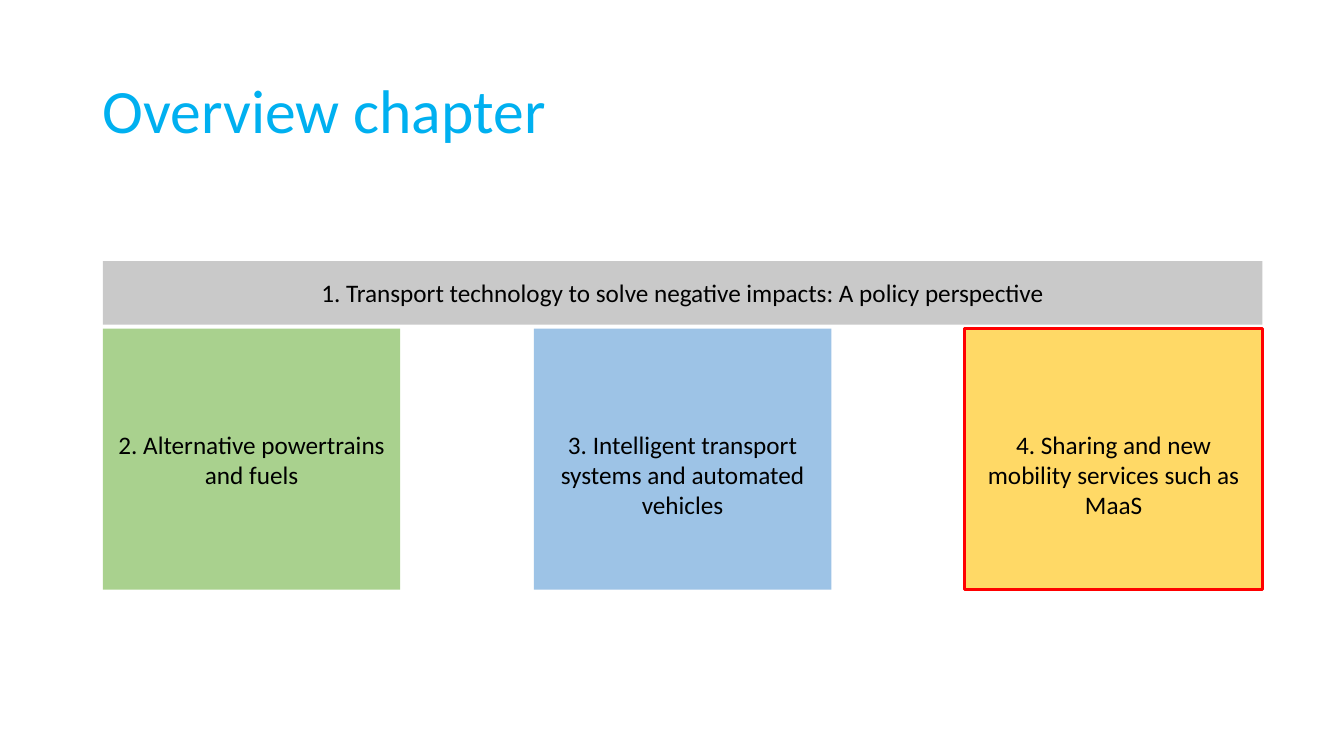
from dataclasses import dataclass

from pptx import Presentation
from pptx.dml.color import RGBColor
from pptx.enum.shapes import MSO_SHAPE
from pptx.enum.text import MSO_ANCHOR, PP_ALIGN
from pptx.util import Inches, Pt

RECTANGLE = MSO_SHAPE.RECTANGLE
MIDDLE = MSO_ANCHOR.MIDDLE
LEFT = PP_ALIGN.LEFT
CENTER = PP_ALIGN.CENTER


@dataclass(frozen=True)
class Theme:
    font: str = "Calibri"
    title_size: float = 44
    body_size: float = 18
    outline_width: float = 2.25
    title: str = "00B0F0"
    text: str = "000000"
    policy: str = "C9C9C9"
    powertrains: str = "A9D18E"
    automation: str = "9DC3E6"
    sharing: str = "FFD966"
    highlight: str = "FF0000"


@dataclass(frozen=True)
class Box:
    left: float
    top: float
    width: float
    height: float

    def lengths(self):
        return [Inches(value) for value in (self.left, self.top, self.width, self.height)]


@dataclass(frozen=True)
class Chapter:
    text: str
    fill: str
    top_inset: float = 0.05
    outline: str = ""


THEME = Theme()
POLICY = Chapter(
    "1. Transport technology to solve negative impacts: A policy perspective", THEME.policy
)
TOPICS = [
    Chapter("2. Alternative powertrains and fuels", THEME.powertrains),
    Chapter("3. Intelligent transport systems and automated vehicles", THEME.automation, 0.35),
    Chapter(
        "4. Sharing and new mobility services such as MaaS", THEME.sharing, 0.35, THEME.highlight
    ),
]


def write_text(shape, text, size, color, alignment):
    frame = shape.text_frame
    frame.word_wrap = True
    frame.vertical_anchor = MIDDLE
    paragraph = frame.paragraphs[0]
    paragraph.alignment = alignment
    run = paragraph.add_run()
    run.text = text
    run.font.name = THEME.font
    run.font.size = Pt(size)
    run.font.color.rgb = RGBColor.from_string(color)
    return paragraph


def add_title(slide, box, text):
    shape = slide.shapes.add_textbox(*box.lengths())
    paragraph = write_text(shape, text, THEME.title_size, THEME.title, LEFT)
    paragraph.line_spacing = 0.9


def add_chapter(slide, box, chapter):
    shape = slide.shapes.add_shape(RECTANGLE, *box.lengths())
    shape.shadow.inherit = False
    shape.fill.solid()
    shape.fill.fore_color.rgb = RGBColor.from_string(chapter.fill)
    if chapter.outline:
        shape.line.color.rgb = RGBColor.from_string(chapter.outline)
        shape.line.width = Pt(THEME.outline_width)
    else:
        shape.line.fill.background()
    shape.text_frame.margin_top = Inches(chapter.top_inset)
    write_text(shape, chapter.text, THEME.body_size, THEME.text, CENTER)


def add_overview(slide, box, policy, topics):
    banner_height, gap, topic_width = 0.63, 0.04, 2.95
    add_chapter(slide, Box(box.left, box.top, box.width, banner_height), policy)
    topic_top = box.top + banner_height + gap
    topic_height = box.height - banner_height - gap
    step = (box.width - topic_width) / (len(topics) - 1)
    for index, topic in enumerate(topics):
        topic_box = Box(box.left + index * step, topic_top, topic_width, topic_height)
        add_chapter(slide, topic_box, topic)


def main():
    presentation = Presentation()
    presentation.slide_width = Inches(13.33)
    presentation.slide_height = Inches(7.5)
    slide = presentation.slides.add_slide(presentation.slide_layouts[6])
    add_title(slide, Box(0.92, 0.4, 11.5, 1.45), "Overview chapter")
    add_overview(slide, Box(1.02, 2.59, 11.5, 3.26), POLICY, TOPICS)
    presentation.save("out.pptx")


if __name__ == "__main__":
    main()
